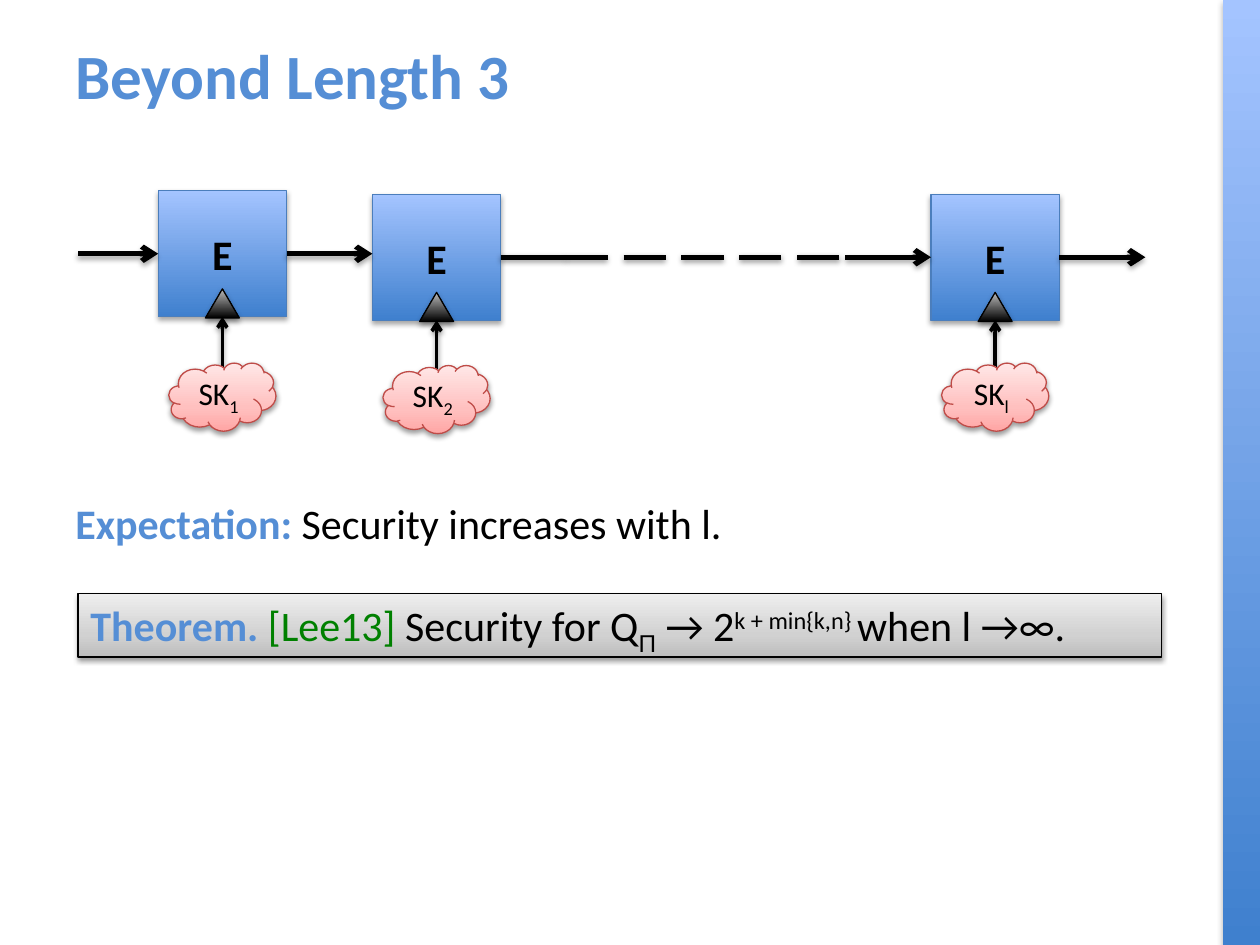
from copy import deepcopy
from lxml import etree
from pptx import Presentation
from pptx import util as u
from pptx.dml.color import RGBColor
from pptx.enum import dml, shapes, text
from pptx.oxml import parse_xml
from pptx.oxml.ns import nsdecls, qn

THEME = {
    "font": "Calibri",
    "symbol_font": "Arial",
    "accent": "558ED5",
    "ink": "000000",
    "cite": "008000",
    "title": 36,
    "body": 24,
    "key": 18,
    "blue": [(0, "3F80CE"), (1, "A4C4FF")],
    "black": [(0, "000000"), (1, "BDBDBD")],
    "pink": [(0, "FFA6A5"), (0.35, "FFC0BF"), (1, "FFE7E7")],
    "grey": [(0, "BDBDBD"), (0.35, "D1D1D1"), (1, "EEEEEE")],
    "blue_edge": "4B7EBC",
    "pink_edge": "BF4C48",
    "strong_shadow": (38, 1.6),
    "soft_shadow": (35, 1.8),
}

ACCENT = {"color": THEME["accent"], "bold": True}
TITLE = [("Beyond Length 3", ACCENT)]
EXPECTATION = [("Expectation:", ACCENT), (" Security increases with l.", {})]
THEOREM = [
    ("Theorem. ", ACCENT),
    ("[Lee13] ", {"color": THEME["cite"]}),
    ("Security for Q", {}),
    ("Π", {"font": THEME["symbol_font"], "base": -25}),
    (" → 2", {}),
    ("k + min{k,n} ", {"base": 30}),
    ("when l →∞.", {}),
]
CIPHERS = [
    {"index": "1", "center": 127.1, "top": 109, "cloud_top": 207.4},
    {"index": "2", "center": 249.5, "top": 111, "cloud_top": 208.8},
    {"index": "l", "center": 568.7, "top": 111, "cloud_top": 207.4},
]
BOX_W, BOX_H = 73.4, 72
TRIANGLE_W, TRIANGLE_H = 19.4, 16.6
CLOUD_W, CLOUD_H = 61.2, 38.9
INPUT_X, OUTPUT_X = 44.6, 654.5
DASH_START, DASH_END = 323.3, 483.1

RECT = shapes.MSO_SHAPE.RECTANGLE
TOP, MIDDLE = text.MSO_ANCHOR.TOP, text.MSO_ANCHOR.MIDDLE
LEFT, CENTER = text.PP_ALIGN.LEFT, text.PP_ALIGN.CENTER

prs = Presentation()
prs.slide_width, prs.slide_height = u.Pt(720), u.Pt(540)
slide = prs.slides.add_slide(prs.slide_layouts[6])


def place(*lengths):
    return [u.Pt(length) for length in lengths]


def write(holder, runs, size, align=LEFT, anchor=TOP, wrap=True):
    frame = holder.text_frame
    frame.word_wrap = wrap
    frame.vertical_anchor = anchor
    paragraph = frame.paragraphs[0]
    paragraph.alignment = align
    for words, style in runs:
        run = paragraph.add_run()
        run.text = words
        run.font.size = u.Pt(size)
        run.font.name = style.get("font", THEME["font"])
        run.font.bold = style.get("bold", False)
        run.font.color.rgb = RGBColor.from_string(style.get("color", THEME["ink"]))
        if "base" in style:
            run.font._element.set("baseline", str(style["base"] * 1000))


def cast_shadow(effects, shadow):
    alpha, distance = shadow
    effects.append(parse_xml(
        f'<a:outerShdw {nsdecls("a")} blurRad="{u.Pt(3.1)}" dist="{u.Pt(distance)}" '
        f'dir="5400000" rotWithShape="0"><a:srgbClr val="000000">'
        f'<a:alpha val="{alpha * 1000}"/></a:srgbClr></a:outerShdw>'))


def add_solid(preset, bounds, stops, edge=None, shadow=THEME["soft_shadow"]):
    solid = slide.shapes.add_shape(preset, *place(*bounds))
    solid.fill.gradient()
    solid.fill.gradient_angle = 90
    stop_list = solid._element.spPr.find(".//" + qn("a:gsLst"))
    while len(stop_list) < len(stops):
        stop_list.append(deepcopy(stop_list[0]))
    for stop, (position, color) in zip(solid.fill.gradient_stops, stops):
        stop.position = position
        stop.color.rgb = RGBColor.from_string(color)
    if edge:
        solid.line.color.rgb = RGBColor.from_string(edge)
        solid.line.width = u.Pt(0.75)
    else:
        solid.line.fill.background()
    solid.shadow.inherit = False
    cast_shadow(solid._element.spPr.find(qn("a:effectLst")), shadow)
    return solid


def add_line(start, end, width=3, arrow=True, dash=None, source=None, target=None,
             shadow=THEME["soft_shadow"]):
    line = slide.shapes.add_connector(
        shapes.MSO_CONNECTOR.STRAIGHT, *place(*start, *end))
    line.line.color.rgb = RGBColor.from_string(THEME["ink"])
    line.line.width = u.Pt(width)
    if dash:
        line.line.dash_style = dash
    if source:
        line.begin_connect(*source)
    if target:
        line.end_connect(*target)
    properties = line._element.spPr
    if arrow:
        etree.SubElement(properties.find(qn("a:ln")), qn("a:tailEnd"), type="arrow")
    cast_shadow(etree.SubElement(properties, qn("a:effectLst")), shadow)


def add_cipher(index, center, top, cloud_top):
    strong = THEME["strong_shadow"]
    bottom = top + BOX_H
    box = add_solid(RECT, (center - BOX_W / 2, top, BOX_W, BOX_H),
                    THEME["blue"], THEME["blue_edge"])
    write(box, [("E", {"bold": True})], THEME["body"], CENTER, MIDDLE)
    add_solid(shapes.MSO_SHAPE.ISOSCELES_TRIANGLE,
              (center - TRIANGLE_W / 2, bottom - TRIANGLE_H + 0.7, TRIANGLE_W, TRIANGLE_H),
              THEME["black"], THEME["ink"])
    add_line((center, cloud_top + 2.2), (center, bottom), width=2,
             target=(box, 2), shadow=strong)
    cloud = add_solid(shapes.MSO_SHAPE.CLOUD,
                      (center - CLOUD_W / 2, cloud_top, CLOUD_W, CLOUD_H),
                      THEME["pink"], THEME["pink_edge"], strong)
    write(cloud, [("SK", {}), (index, {"base": -25})], THEME["key"],
          CENTER, MIDDLE, wrap=False)
    return box


add_solid(RECT, (698.7, 0, 21.3, 540), THEME["blue"])
write(slide.shapes.add_textbox(*place(36, 12.2, 651, 60)), TITLE, THEME["title"],
      anchor=MIDDLE)

first, second, last = [add_cipher(**cipher) for cipher in CIPHERS]
first_y, chain_y = [cipher["top"] + BOX_H / 2 for cipher in CIPHERS[:2]]
first_left, second_left, last_left = [c["center"] - BOX_W / 2 for c in CIPHERS]

add_line((INPUT_X, first_y), (first_left, first_y), target=(first, 1))
add_line((first_left + BOX_W, first_y), (second_left, first_y), source=(first, 3))
add_line((second_left + BOX_W, chain_y), (DASH_START, chain_y), arrow=False,
         source=(second, 3), shadow=THEME["strong_shadow"])
add_line((DASH_START, chain_y), (DASH_END, chain_y), arrow=False,
         dash=dml.MSO_LINE.LONG_DASH, shadow=THEME["strong_shadow"])
add_line((DASH_END, chain_y), (last_left, chain_y), target=(last, 1))
add_line((last_left + BOX_W, chain_y), (OUTPUT_X, chain_y), source=(last, 3))

write(slide.shapes.add_textbox(*place(36, 281, 636.5, 36)), EXPECTATION, THEME["body"])
theorem = add_solid(RECT, (44.6, 339.2, 619.2, 36.3), THEME["grey"], THEME["ink"],
                    THEME["strong_shadow"])
write(theorem, THEOREM, THEME["body"])

prs.save("out.pptx")
